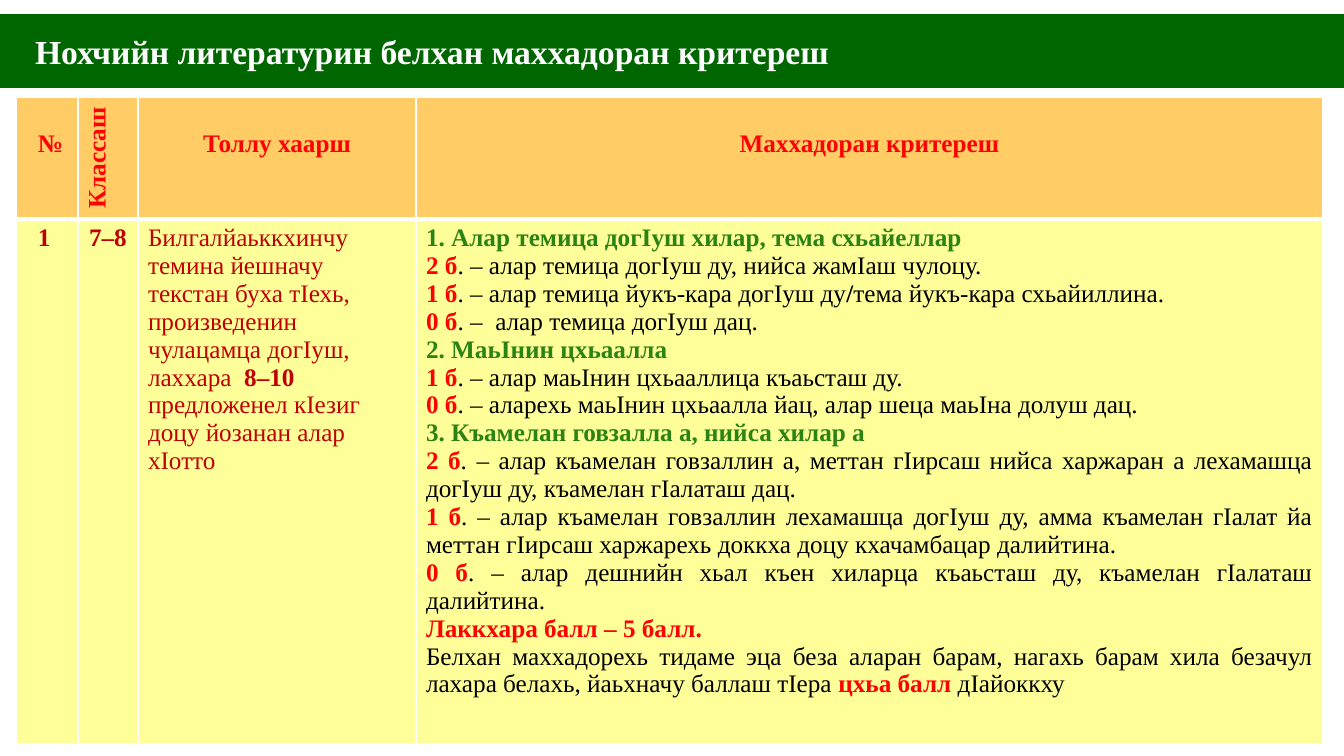
from lxml import etree
from pptx import Presentation
from pptx.dml.color import RGBColor
from pptx.enum.text import MSO_ANCHOR, PP_ALIGN
from pptx.oxml.ns import qn
from pptx.util import Emu, Pt

LEFT, CENTER, JUSTIFY = PP_ALIGN.LEFT, PP_ALIGN.CENTER, PP_ALIGN.JUSTIFY
MIDDLE = MSO_ANCHOR.MIDDLE

WHITE = RGBColor(0xFF, 0xFF, 0xFF)
BLACK = RGBColor(0x00, 0x00, 0x00)
RED = RGBColor(0xFF, 0x00, 0x00)
DARK_RED = RGBColor(0xC0, 0x00, 0x00)
GREEN = RGBColor(0x2B, 0x83, 0x13)
BANNER = RGBColor(0x00, 0x66, 0x00)
ORANGE = RGBColor(0xFF, 0xCC, 0x66)
YELLOW = RGBColor(0xFF, 0xFF, 0x99)
FONT = "Times New Roman"


def px(n):
    return Emu(round(n * 914400 / 100.8))


def add_runs(p, runs, size=18):
    """Fill a paragraph with runs given as (text, colour, bold)."""
    for text, color, bold in runs:
        r = p.add_run()
        r.text = text
        r.font.name = FONT
        r.font.size = Pt(size)
        r.font.bold = bold
        r.font.color.rgb = color


prs = Presentation()
prs.slide_width, prs.slide_height = px(1344), px(756)
slide = prs.slides.add_slide(prs.slide_layouts[5])

# Title banner
title = slide.shapes.title
title.left, title.top, title.width, title.height = px(0), px(14), px(1344), px(74)
title.fill.solid()
title.fill.fore_color.rgb = BANNER
tf = title.text_frame
tf.word_wrap = True
tf.vertical_anchor = MIDDLE
tf.margin_left = px(35)
tf.paragraphs[0].alignment = LEFT
add_runs(tf.paragraphs[0],
         [("Нохчийн литературин белхан маххадоран критереш", WHITE, True)], 24)

# Wording of the criteria: a heading, then (points, description) pairs
CRITERIA = [
    ("1. Алар темица догӀуш хилар, тема схьайеллар", [
        ("2 б", ". – алар темица догӀуш ду, нийса жамӀаш чулоцу."),
        ("1 б", ". – алар темица йукъ-кара догӀуш ду/тема йукъ-кара схьайиллина."),
        ("0 б", ". –  алар темица догӀуш дац."),
    ]),
    ("2. МаьӀнин цхьаалла", [
        ("1 б", ". – алар маьӀнин цхьааллица къаьсташ ду."),
        ("0 б", ". – аларехь маьӀнин цхьаалла йац, алар шеца маьӀна долуш дац."),
    ]),
    ("3. Къамелан говзалла а, нийса хилар а", [
        ("2 б", ". – алар къамелан говзаллин а, меттан гӀирсаш нийса харжаран а "
                "лехамашца догӀуш ду, къамелан гӀалаташ дац."),
        ("1 б", ". – алар къамелан говзаллин лехамашца догӀуш ду, амма къамелан гӀалат йа "
                "меттан гӀирсаш харжарехь доккха доцу кхачамбацар далийтина."),
        ("0 б", ". – алар дешнийн хьал къен хиларца къаьсташ ду, къамелан гӀалаташ "
                "далийтина."),
    ]),
]
criteria = []
for heading, grades in CRITERIA:
    criteria.append([(heading, GREEN, True)])
    for points, description in grades:
        runs = [(points, RED, True)]
        before, slash, after = description.partition("/")
        runs.append((before, BLACK, False))
        if slash:
            runs += [(slash, BLACK, True), (after, BLACK, False)]
        criteria.append(runs)
criteria.append([("Лаккхара балл – 5 балл.", RED, True)])
criteria.append([
    ("Белхан маххадорехь тидаме эца беза аларан барам, нагахь барам хила безачул "
     "лахара белахь, йаьхначу баллаш тIера ", BLACK, False),
    ("цхьа балл ", RED, True),
    ("дIайоккху", BLACK, False),
])

skills = [
    ("Билгалйаьккхинчу темина йешначу текстан буха тӀехь, произведенин чулацамца "
     "догӀуш, лаххара  ", DARK_RED, False),
    ("8–10 ", DARK_RED, True),
    ("предложенел кӀезиг доцу йозанан алар хӀотто", DARK_RED, False),
]

# Each cell: alignment and paragraphs
ROWS = [
    [(LEFT, [[("№", RED, True)]]),
     (LEFT, [[("Классаш", RED, True)]]),
     (CENTER, [[("Толлу хаарш", RED, True)]]),
     (CENTER, [[("Маххадоран критереш", RED, True)]])],
    [(LEFT, [[("1", DARK_RED, True)]]),
     (CENTER, [[("7–8", DARK_RED, True)]]),
     (LEFT, [skills]),
     (JUSTIFY, criteria)],
]
COL_WIDTHS = [62, 60, 278, 907]
ROW_HEIGHTS = [122, 525]

table = slide.shapes.add_table(2, 4, px(16), px(97), px(sum(COL_WIDTHS)),
                               px(sum(ROW_HEIGHTS))).table
for column, width in zip(table.columns, COL_WIDTHS):
    column.width = px(width)
for row, height in zip(table.rows, ROW_HEIGHTS):
    row.height = px(height)

for i, row in enumerate(ROWS):
    header = i == 0
    for j, (alignment, paragraphs) in enumerate(row):
        cell = table.cell(i, j)
        cell.fill.solid()
        cell.fill.fore_color.rgb = ORANGE if header else YELLOW
        tf = cell.text_frame
        for k, runs in enumerate(paragraphs):
            p = tf.add_paragraph() if k else tf.paragraphs[0]
            p.alignment = alignment
            add_runs(p, runs)
        if j == 0:
            cell.margin_left = px(22)
            cell.margin_right = px(5)
        if header and j != 1:
            cell.margin_top = px(33)

        tcPr = cell._tc.get_or_add_tcPr()
        if header and j == 1:
            tcPr.set("vert", "vert270")
        thick_side = "lnB" if header else "lnT"
        for n, side in enumerate(["lnL", "lnR", "lnT", "lnB"]):
            ln = etree.Element(qn("a:" + side), w=str(Pt(3 if side == thick_side else 1)))
            fill = etree.SubElement(ln, qn("a:solidFill"))
            etree.SubElement(fill, qn("a:srgbClr"), val=str(WHITE))
            tcPr.insert(n, ln)

prs.save("out.pptx")
